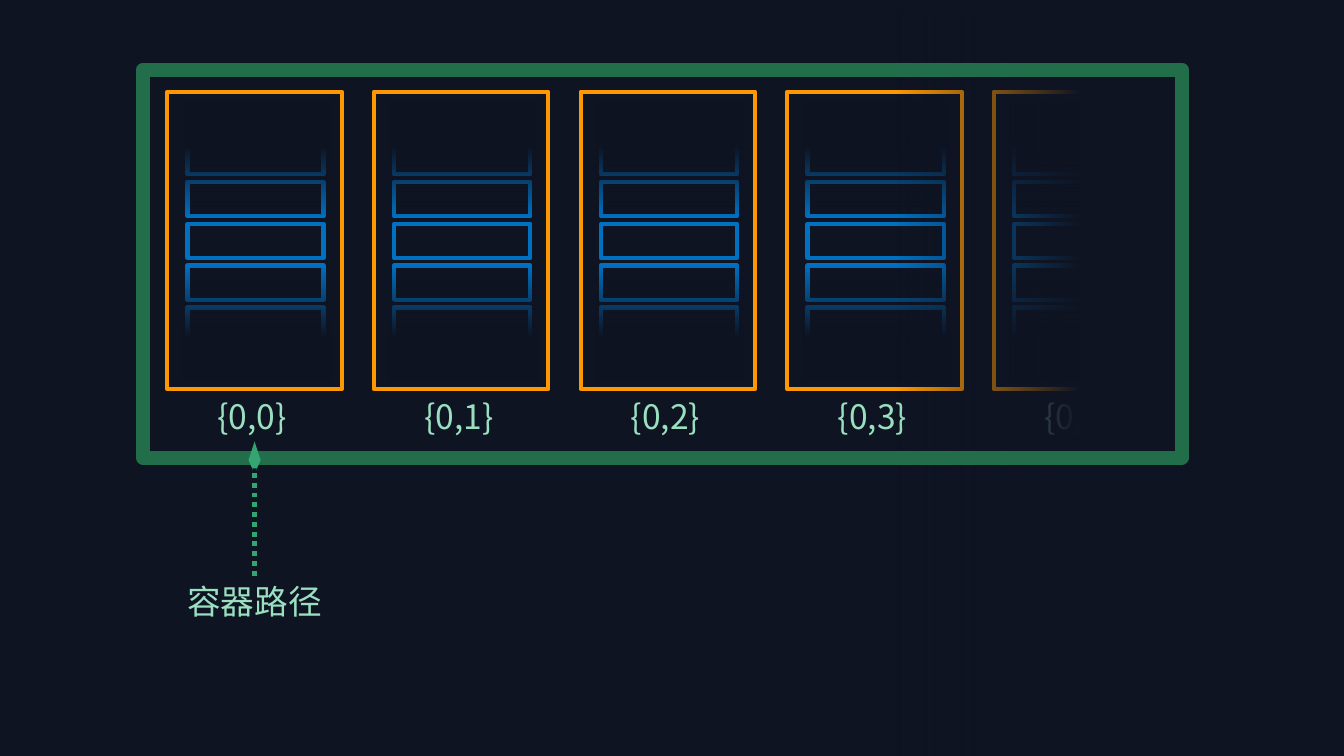
from dataclasses import dataclass
from typing import Any

from lxml import etree
from pptx import Presentation
from pptx import util as u
from pptx.dml import color
from pptx.enum import dml, shapes, text
from pptx.oxml import ns

COLORS = {
    "background": "0F1423",
    "container": "FF9800",
    "item": "0070C0",
    "label": "9ADFBF",
    "frame": "226E4B",
    "arrow": "34A471",
}
FONT = "Noto Sans CJK SC"
CONTAINER_COUNT = 5
FIRST_CONTAINER_LEFT = 1.66
CONTAINER_PITCH = 2.05
ITEM_COUNT = 5
FIRST_ITEM_TOP = 1.39
ITEM_PITCH = 0.415


@dataclass(frozen=True)
class Box:
    left: float
    top: float
    width: float
    height: float

    def lengths(self) -> tuple[u.Length, ...]:
        return tuple(u.Inches(v) for v in (self.left, self.top, self.width, self.height))


def rgb(name: str) -> color.RGBColor:
    return color.RGBColor.from_string(COLORS[name])


def add_rectangle(parent: Any, box: Box) -> Any:
    shape = parent.add_shape(shapes.MSO_SHAPE.RECTANGLE, *box.lengths())
    shape.shadow.inherit = False
    shape.fill.background()
    return shape


def add_outline(parent: Any, box: Box, color_name: str, width: float) -> None:
    shape = add_rectangle(parent, box)
    shape.line.color.rgb = rgb(color_name)
    shape.line.width = u.Pt(width)


def add_fade(parent: Any, box: Box, rotation: float = 0) -> None:
    """Add a cover that is solid at its top and clear at its bottom, before rotation."""
    shape = add_rectangle(parent, box)
    shape.rotation = rotation
    shape.line.fill.background()
    background = COLORS["background"]
    gradient = etree.fromstring(
        f'<a:gradFill {ns.nsdecls("a")} rotWithShape="1"><a:gsLst>'
        f'<a:gs pos="38000"><a:srgbClr val="{background}"/></a:gs>'
        f'<a:gs pos="100000"><a:srgbClr val="{background}"><a:alpha val="0"/></a:srgbClr></a:gs>'
        '</a:gsLst><a:lin ang="5400000" scaled="0"/></a:gradFill>'
    )
    properties = shape._element.spPr
    properties.replace(properties.find(ns.qn("a:noFill")), gradient)


def add_container(slide: Any, left: float) -> None:
    """Add a container whose items fade out above and below."""
    group = slide.shapes.add_group_shape().shapes
    for row in range(ITEM_COUNT):
        item = Box(left + 0.2, FIRST_ITEM_TOP + row * ITEM_PITCH, 1.35, 0.34)
        add_outline(group, item, "item", 3)
    add_outline(group, Box(left, 0.91, 1.73, 2.95), "container", 3)
    add_fade(group, Box(left + 0.15, 2.64, 1.47, 1.14), 180)
    add_fade(group, Box(left + 0.15, 1.02, 1.47, 1.13))


def add_label(slide: Any, box: Box, wording: str) -> Any:
    label = slide.shapes.add_textbox(*box.lengths())
    label.text_frame.word_wrap = False
    label.text_frame.auto_size = text.MSO_AUTO_SIZE.SHAPE_TO_FIT_TEXT
    run = label.text_frame.paragraphs[0].add_run()
    run.text = wording
    run.font.size = u.Pt(24)
    run.font.name = FONT
    run.font.color.rgb = rgb("label")
    east_asian = etree.SubElement(run.font._element, ns.qn("a:ea"))
    east_asian.set("typeface", FONT)
    return label


def add_dotted_arrow(slide: Any, source: Any, target: Any) -> None:
    """Join the top of the source to the bottom of the target."""
    arrow = slide.shapes.add_connector(shapes.MSO_CONNECTOR.STRAIGHT, 0, 0, 0, 0)
    arrow.begin_connect(source, 0)
    arrow.end_connect(target, 2)
    arrow.line.color.rgb = rgb("arrow")
    arrow.line.width = u.Pt(3.5)
    arrow.line.dash_style = dml.MSO_LINE.ROUND_DOT
    properties = arrow._element.spPr
    head = etree.SubElement(properties.find(ns.qn("a:ln")), ns.qn("a:tailEnd"))
    for name, value in (("type", "arrow"), ("w", "sm"), ("len", "lg")):
        head.set(name, value)
    etree.SubElement(properties, ns.qn("a:effectLst"))


def main() -> None:
    presentation = Presentation()
    presentation.slide_width = u.Inches(13.33)
    presentation.slide_height = u.Inches(7.5)
    slide = presentation.slides.add_slide(presentation.slide_layouts[6])
    slide.background.fill.solid()
    slide.background.fill.fore_color.rgb = rgb("background")

    path_labels = []
    for column in range(CONTAINER_COUNT):
        left = FIRST_CONTAINER_LEFT + column * CONTAINER_PITCH
        add_container(slide, left)
        label_box = Box(left + 0.4, 3.88, 0.93, 0.5)
        path_labels.append(add_label(slide, label_box, f"{{0,{column}}}"))

    add_fade(slide.shapes, Box(6.62, 2.38, 7.5, 2.95), 90)
    add_outline(slide.shapes, Box(1.42, 0.69, 10.3, 3.85), "frame", 10)
    caption = add_label(slide, Box(1.76, 5.71, 1.53, 0.5), "容器路径")
    add_dotted_arrow(slide, caption, path_labels[0])
    presentation.save("out.pptx")


if __name__ == "__main__":
    main()
